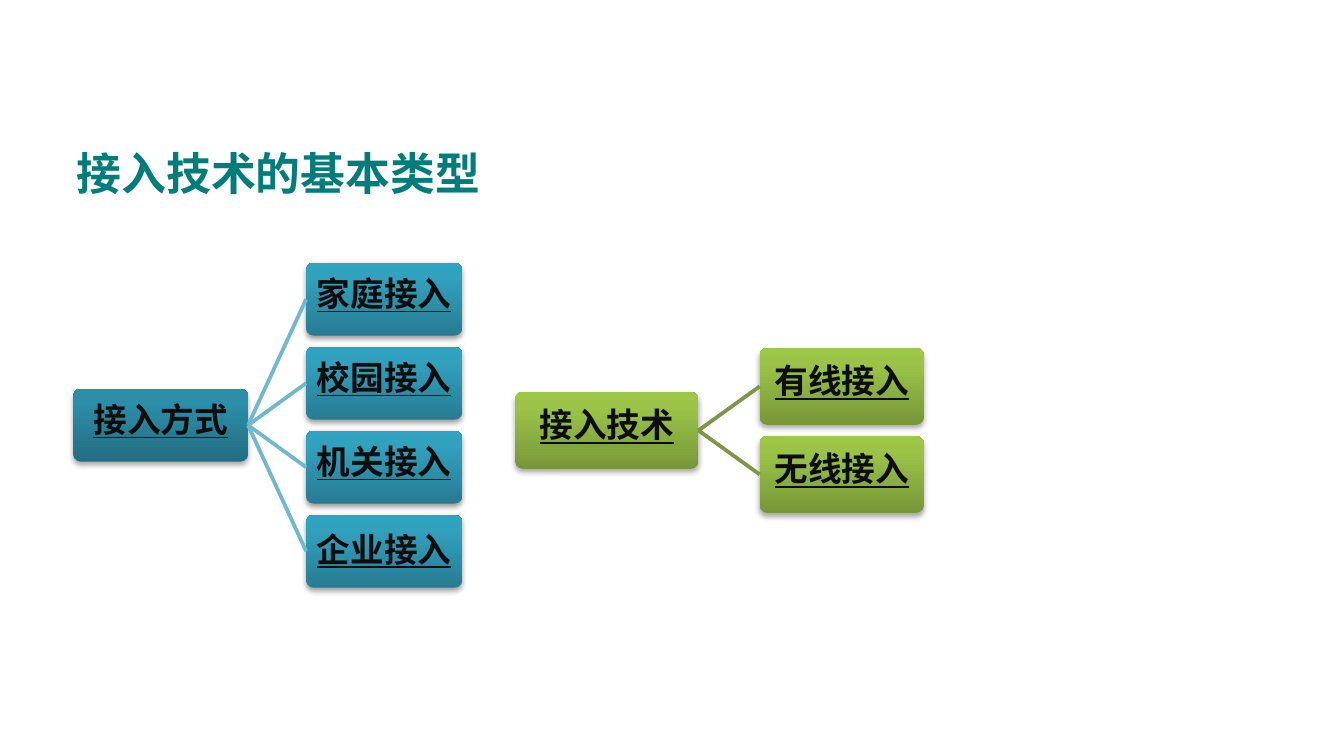
from dataclasses import dataclass

from lxml.etree import SubElement
from pptx import Presentation
from pptx.dml.color import RGBColor
from pptx.enum.shapes import MSO_CONNECTOR as Connector, MSO_SHAPE as Shape
from pptx.enum.text import MSO_ANCHOR as Anchor, PP_ALIGN as Align
from pptx.oxml import parse_xml
from pptx.oxml.ns import nsdecls, qn
from pptx.util import Pt


@dataclass(frozen=True)
class BoxStyle:
    stops: tuple[str, str, str]  # bottom to top
    shadow_opacity: int
    shadow_distance: float


@dataclass(frozen=True)
class Theme:
    title_color: str = "007D7A"
    label_color: str = "0D0D0D"
    title_size: float = 24
    label_size: float = 18
    title_font: str = "Times New Roman"
    label_font: str = "Noto Sans CJK SC"
    line_width: float = 2
    blue_line: str = "71B7CD"
    green_line: str = "7C9647"
    blue_root: BoxStyle = BoxStyle(("226D81", "2C8EA8", "2A90AB"), 35, 1.8)
    blue_leaf: BoxStyle = BoxStyle(("267C93", "32A1BE", "2FA3C2"), 38, 1.6)
    green: BoxStyle = BoxStyle(("779737", "9BC348", "9DC746"), 35, 1.8)


THEME = Theme()
LEAF_GAP = 6


@dataclass(frozen=True)
class Label:
    text: str
    line_spacing: float = 0.6
    space_after: float = 0


@dataclass(frozen=True)
class Tree:
    root: Label
    leaves: tuple[Label, ...]
    root_left: float
    root_width: float
    leaf_left: float
    leaf_width: float
    box_height: float
    middle: float
    root_style: BoxStyle
    leaf_style: BoxStyle
    line_color: str


TREES = (
    Tree(Label("接入方式"),
         (Label("家庭接入"), Label("校园接入"), Label("机关接入"),
          Label("企业接入", 0.9, 6.3)),
         39.3, 93.6, 164, 83.6, 39, 227.8,
         THEME.blue_root, THEME.blue_leaf, THEME.blue_line),
    Tree(Label("接入技术"), (Label("有线接入"), Label("无线接入")),
         276, 98.2, 407, 88, 41.2, 230.6,
         THEME.green, THEME.green, THEME.green_line),
)


def set_font(para, latin: str, size: float, color: str) -> None:
    font = para.font
    font.name, font.size, font.bold = latin, Pt(size), True
    font.color.rgb = RGBColor.from_string(color)
    east_asian = SubElement(font._element, qn("a:ea"))
    east_asian.set("typeface", THEME.label_font)
    font._element.find(qn("a:latin")).addnext(east_asian)


def paint_box(box, style: BoxStyle) -> None:
    """Give the box a vertical gradient, no outline and a soft shadow."""
    box.line.fill.background()
    outline = box._element.spPr.find(qn("a:ln"))
    stops = "".join(
        f'<a:gs pos="{position}"><a:srgbClr val="{color}"/></a:gs>'
        for position, color in zip((0, 80000, 100000), style.stops))
    outline.addprevious(parse_xml(
        f'<a:gradFill {nsdecls("a")} rotWithShape="1"><a:gsLst>{stops}</a:gsLst>'
        '<a:lin ang="16200000" scaled="0"/></a:gradFill>'))
    outline.addnext(parse_xml(
        f'<a:effectLst {nsdecls("a")}><a:outerShdw blurRad="{Pt(3.1)}" '
        f'dist="{Pt(style.shadow_distance)}" dir="5400000" rotWithShape="0">'
        f'<a:srgbClr val="000000"><a:alpha val="{style.shadow_opacity * 1000}"/>'
        '</a:srgbClr></a:outerShdw></a:effectLst>'))


def add_box(page, label: Label, left: float, top: float, width: float,
            height: float, style: BoxStyle):
    box = page.shapes.add_shape(Shape.ROUNDED_RECTANGLE, Pt(left), Pt(top),
                                Pt(width), Pt(height))
    box.adjustments[0] = 0.1
    paint_box(box, style)
    frame = box.text_frame
    frame.word_wrap = True
    frame.vertical_anchor = Anchor.MIDDLE
    frame.margin_left = frame.margin_right = Pt(0.72)
    frame.margin_top = frame.margin_bottom = Pt(0.72)
    para = frame.paragraphs[0]
    para.text = label.text
    para.alignment = Align.CENTER
    para.line_spacing = label.line_spacing
    para.space_after = Pt(label.space_after)
    set_font(para, THEME.label_font, THEME.label_size, THEME.label_color)
    para.font.underline = True
    return box


def add_branch(page, root, leaf, color: str) -> None:
    branch = page.shapes.add_connector(Connector.STRAIGHT, 0, 0, 0, 0)
    branch.begin_connect(root, 3)
    branch.end_connect(leaf, 1)
    branch.line.width = Pt(THEME.line_width)
    branch.line.color.rgb = RGBColor.from_string(color)
    SubElement(branch._element.spPr, qn("a:effectLst"))


def add_tree(page, tree: Tree) -> None:
    """Draw the root and its leaves, both centred on the tree's middle."""
    height = tree.box_height
    root = add_box(page, tree.root, tree.root_left, tree.middle - height / 2,
                   tree.root_width, height, tree.root_style)
    pitch = height + LEAF_GAP
    first_top = tree.middle - (len(tree.leaves) * pitch - LEAF_GAP) / 2
    for index, label in enumerate(tree.leaves):
        leaf = add_box(page, label, tree.leaf_left, first_top + index * pitch,
                       tree.leaf_width, height, tree.leaf_style)
        add_branch(page, root, leaf, tree.line_color)


def add_title(page, text: str) -> None:
    box = page.shapes.add_textbox(Pt(34), Pt(49), Pt(612), Pt(86.4))
    frame = box.text_frame
    frame.word_wrap = True
    frame.vertical_anchor = Anchor.MIDDLE
    para = frame.paragraphs[0]
    para.text = text
    set_font(para, THEME.title_font, THEME.title_size, THEME.title_color)


def main() -> None:
    deck = Presentation()
    deck.slide_width, deck.slide_height = Pt(720), Pt(405)
    page = deck.slides.add_slide(deck.slide_layouts[6])
    add_title(page, "接入技术的基本类型")
    for tree in TREES:
        add_tree(page, tree)
    deck.save("out.pptx")


if __name__ == "__main__":
    main()
